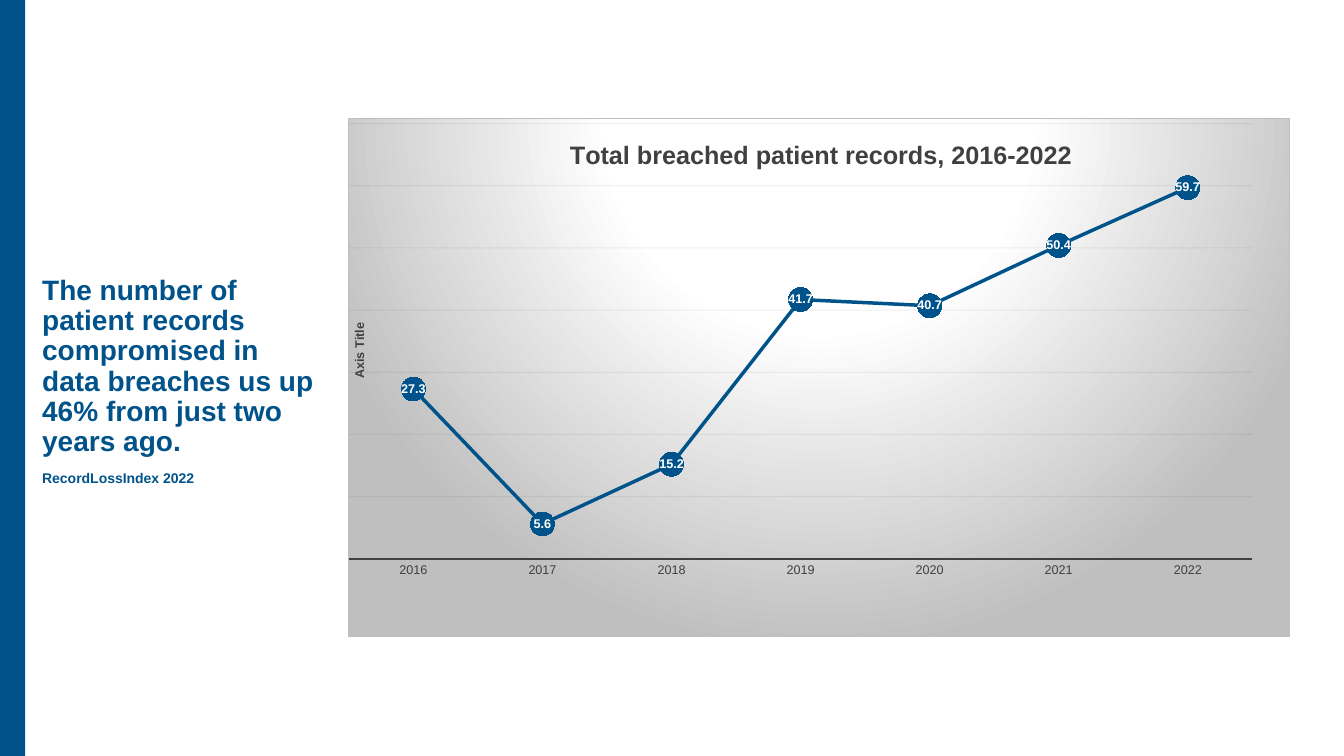
from lxml import etree
from pptx import Presentation
from pptx.chart.data import CategoryChartData
from pptx.dml.color import RGBColor
from pptx.enum.chart import XL_CHART_TYPE, XL_LABEL_POSITION, XL_MARKER_STYLE, XL_TICK_MARK
from pptx.enum.shapes import MSO_SHAPE
from pptx.enum.text import MSO_ANCHOR
from pptx.oxml import parse_xml
from pptx.oxml.ns import nsdecls, qn
from pptx.util import Inches, Pt

LINE_MARKERS = XL_CHART_TYPE.LINE_MARKERS
CENTER = XL_LABEL_POSITION.CENTER
CIRCLE = XL_MARKER_STYLE.CIRCLE
NO_TICK = XL_TICK_MARK.NONE
RECT = MSO_SHAPE.RECTANGLE
TOP = MSO_ANCHOR.TOP

CHART_FRAME = f"""<c:spPr {nsdecls('c', 'a')}>
  <a:gradFill><a:gsLst>
    <a:gs pos="0"><a:srgbClr val="FFFFFF"/></a:gs>
    <a:gs pos="39000"><a:srgbClr val="FFFFFF"/></a:gs>
    <a:gs pos="100000"><a:srgbClr val="BFBFBF"/></a:gs>
  </a:gsLst><a:path path="circle">
    <a:fillToRect l="50000" t="-80000" r="50000" b="180000"/>
  </a:path></a:gradFill>
  <a:ln w="9525"><a:solidFill><a:srgbClr val="BFBFBF"/></a:solidFill></a:ln>
</c:spPr>"""


def rgb(value):
    """Turn a hex string into a colour."""
    return RGBColor.from_string(value)


class SlideBuilder:
    """Hold the style and the slide; places are percentages of its size."""

    font, blue, gray, white = "Arial", "00538A", "404040", "FFFFFF"

    def __init__(self, prs):
        """Add a blank slide to the presentation."""
        self.prs = prs
        self.s = prs.slides.add_slide(prs.slide_layouts[6])

    def box(self, x, y, w, h):
        """Turn percentages of the slide into lengths."""
        width, height = self.prs.slide_width, self.prs.slide_height
        sides = (x, width), (y, height), (w, width), (h, height)
        return [round(share * full / 100) for share, full in sides]

    def style(self, font, size, color, bold=False):
        """Set the look of a font."""
        for key, value in {"name": self.font, "size": Pt(size), "bold": bold}.items():
            setattr(font, key, value)
        font.color.rgb = rgb(color)

    def line(self, line, color, width):
        """Set the colour and width of a line."""
        line.color.rgb = rgb(color)
        line.width = Pt(width)

    def bar(self, *place):
        """Draw a plain filled rectangle."""
        sp = self.s.shapes.add_shape(RECT, *self.box(*place))
        sp.shadow.inherit = False
        sp.fill.solid()
        sp.fill.fore_color.rgb = rgb(self.blue)
        sp.line.fill.background()

    def text(self, place, lines):
        """Write bold paragraphs given as pairs of text and size."""
        tf = self.s.shapes.add_textbox(*self.box(*place)).text_frame
        tf.word_wrap = True
        tf.vertical_anchor = TOP
        for i, (words, size) in enumerate(lines):
            p = tf.add_paragraph() if i else tf.paragraphs[0]
            p.line_spacing = 0.9
            p.space_before = Pt(10 if i else 0)
            r = p.add_run()
            r.text = words
            self.style(r.font, size, self.blue, True)

    def layout(self, element, index, **values):
        """Give a chart part a manual place as shares of the chart."""
        for old in element.findall(qn("c:layout")):
            element.remove(old)
        layout = etree.Element(qn("c:layout"))
        manual = etree.SubElement(layout, qn("c:manualLayout"))
        for key, value in values.items():
            etree.SubElement(manual, qn(f"c:{key}")).set("val", str(value))
        element.insert(index, layout)

    def title(self, owner, words, size, x, y):
        """Write a chart or axis title at a given place."""
        title = owner.chart_title if hasattr(owner, "chart_title") else owner.axis_title
        tf = title.text_frame
        r = tf.paragraphs[0].add_run()
        r.text = words
        self.style(r.font, size, self.gray, True)
        self.layout(title._element, 1, xMode="edge", yMode="edge", x=x, y=y)
        return tf

    def chart(self, place, title, axis_title, records):
        """Draw the line chart of yearly values."""
        data = CategoryChartData()
        data.categories = list(records)
        data.add_series("Series 1", records.values())
        chart = self.s.shapes.add_chart(LINE_MARKERS, *self.box(*place), data).chart
        self.style(chart.font, 10, "000000")
        chart.has_legend = False
        chart._chartSpace.find(qn("c:chart")).addnext(parse_xml(CHART_FRAME))
        self.title(chart, title, 18, 0.23, 0.03)
        self.layout(chart._chartSpace.chart.plotArea, 0, layoutTarget="inner",
                    xMode="edge", yMode="edge", x=0, y=0.01, w=0.96, h=0.84)
        self.axes(chart, axis_title)
        self.series(chart.plots[0])

    def axes(self, chart, axis_title):
        """Format the year axis and the hidden value axis."""
        years, values = chart.category_axis, chart.value_axis
        years.major_tick_mark = years.minor_tick_mark = NO_TICK
        self.style(years.tick_labels.font, 9, self.gray)
        self.line(years.format.line, self.gray, 1.5)
        scale = {"minimum_scale": 0, "maximum_scale": 70, "major_unit": 10,
                 "has_major_gridlines": True, "visible": False}
        for key, value in scale.items():
            setattr(values, key, value)
        grid = values.major_gridlines.format.line
        self.line(grid, "0D0D0D", 0.75)
        for color in values.major_gridlines._xAx.iter(qn("a:srgbClr")):
            if color.get("val") == "0D0D0D":
                etree.SubElement(color, qn("a:alpha")).set("val", "5000")
        tf = self.title(values, axis_title, 9, 0, 0.39)
        tf._txBody.bodyPr.set("rot", "-5400000")
        tf._txBody.bodyPr.set("vert", "horz")

    def series(self, plot):
        """Format the line, its markers and its labels."""
        plot.vary_by_categories = False
        series = plot.series[0]
        series.smooth = False
        self.line(series.format.line, self.blue, 2.5)
        marker = series.marker
        marker.style, marker.size = CIRCLE, 17
        marker.format.fill.solid()
        marker.format.fill.fore_color.rgb = rgb(self.blue)
        marker.format.line.fill.background()
        labels = series.data_labels
        labels.show_value = True
        labels.position = CENTER
        self.style(labels.font, 9, self.white, True)


def main():
    """Build and save the slide."""
    prs = Presentation()
    prs.slide_width, prs.slide_height = Inches(13.33), Inches(7.5)
    slide = SlideBuilder(prs)
    slide.bar(0, 0, 1.88, 100)
    slide.text((2.4, 35.87, 22.28, 34.13), [
        ("The number of patient records compromised in data breaches "
         "us up 46% from just two years ago.", 20),
        ("RecordLossIndex 2022", 10),
    ])
    slide.chart(
        (25.88, 15.6, 70.14, 68.67),
        "Total breached patient records, 2016-2022", "Axis Title",
        {"2016": 27.3, "2017": 5.6, "2018": 15.2, "2019": 41.7,
         "2020": 40.7, "2021": 50.4, "2022": 59.7})
    prs.save("out.pptx")


if __name__ == "__main__":
    main()
